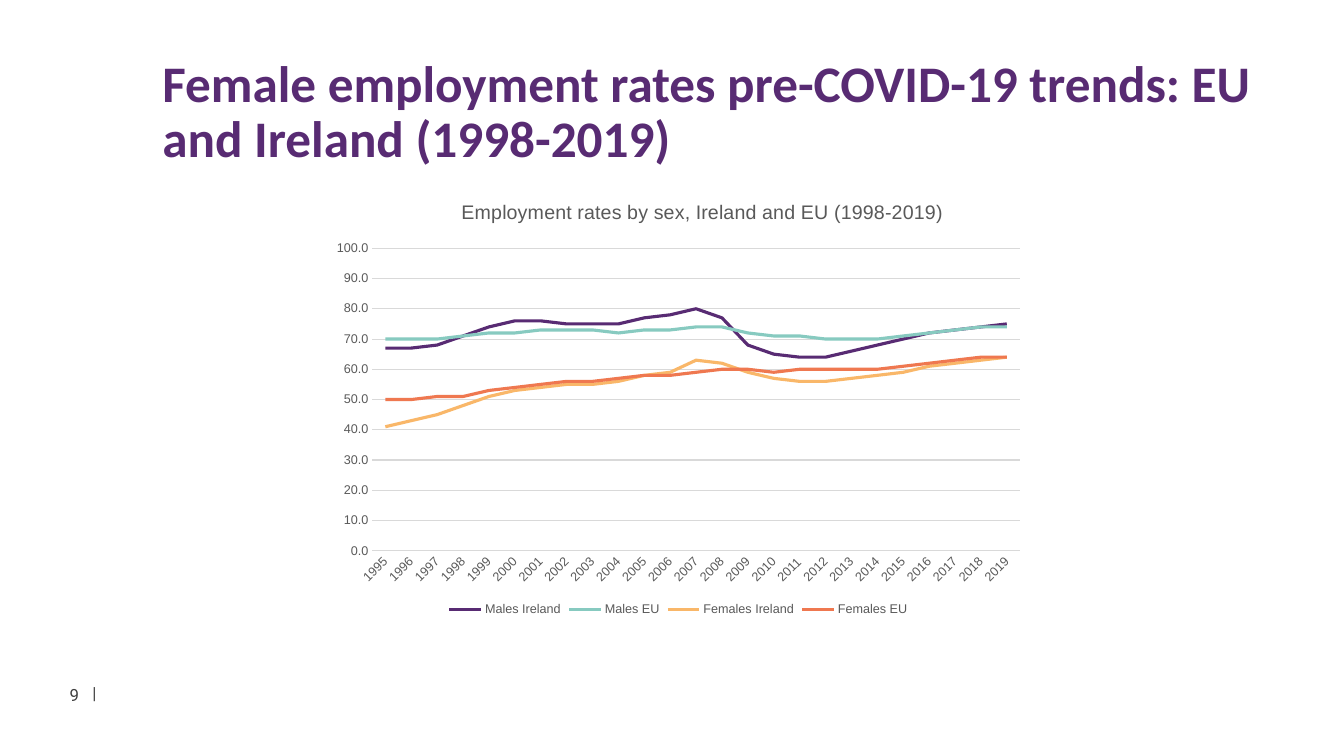
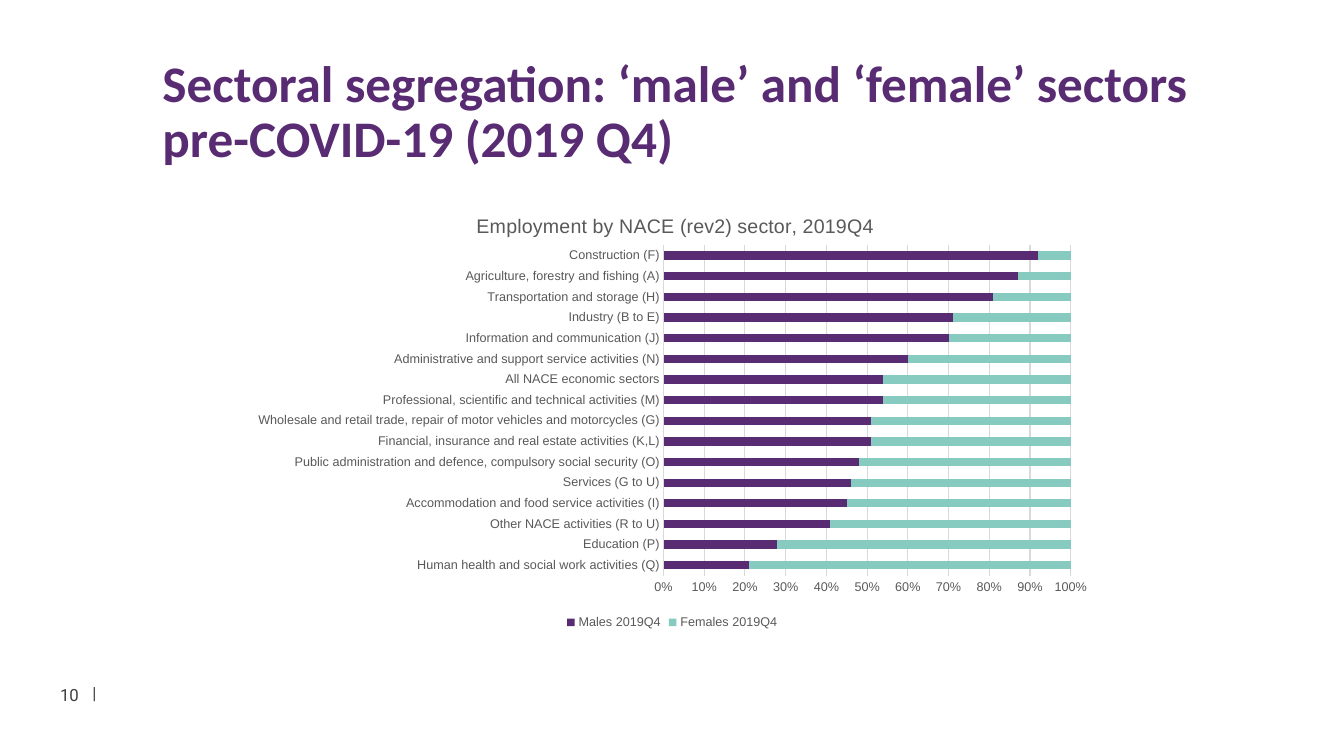
import pptx
import pptx.chart.data
import pptx.dml.color
import pptx.enum.chart
import pptx.enum.text
import pptx.oxml
import pptx.oxml.ns
import pptx.util

Cm = pptx.util.Cm
Pt = pptx.util.Pt
RGB = pptx.dml.color.RGBColor
qn = pptx.oxml.ns.qn
KIND = pptx.enum.chart.XL_CHART_TYPE
ALIGN = pptx.enum.text.PP_ALIGN
ANCHOR = pptx.enum.text.MSO_ANCHOR

# Shared colours and text styles
PURPLE = RGB(0x58, 0x2B, 0x73)
TEAL = RGB(0x87, 0xCA, 0xC0)
AMBER = RGB(0xF9, 0xB7, 0x69)
CORAL = RGB(0xEF, 0x78, 0x50)
DARK = RGB(0x3F, 0x3F, 0x3F)
GREY = RGB(0x59, 0x59, 0x59)
PALE = RGB(0xD9, 0xD9, 0xD9)
TONES = [PURPLE, TEAL, AMBER, CORAL]

HEAD = {"name": "Calibri", "size": Pt(36.6), "bold": True}
FOOT = {"name": "Roboto", "size": Pt(12)}
LABEL = {"name": "Arial", "size": Pt(9)}
TITLE = {"name": "Arial", "size": Pt(14), "bold": False}

# Footer parts: box in cm, alignment, anchor
NUMBER = ((0.89, 17.07, 1.35, 0.86), ALIGN.RIGHT, ANCHOR.MIDDLE)
RULE = ((2.08, 17.09, 0.61, 0.76), ALIGN.LEFT, ANCHOR.TOP)

# Slide content
PAGES = [
    {
        "head": "Female employment rates pre-COVID-19 trends: EU and Ireland (1998-2019)",
        "page": "9",
        "kind": KIND.LINE,
        "box": (8.13, 4.6, 17.93, 11.05),
        "title": "Employment rates by sex, Ireland and EU (1998-2019)",
        "spot": {"x": 0.19, "y": 0.03},
        "plot": {"x": 0.07, "y": 0.15, "w": 0.91, "h": 0.69},
        "scale": {"minimum_scale": 0, "maximum_scale": 100, "major_unit": 10},
        "format": "#,##0.0",
        "cats": [str(year) for year in range(1995, 2020)],
        "series": {
            "Males Ireland": [67, 67, 68, 71, 74, 76, 76, 75, 75, 75, 77, 78, 80,
                              77, 68, 65, 64, 64, 66, 68, 70, 72, 73, 74, 75],
            "Males EU": [70, 70, 70, 71, 72, 72, 73, 73, 73, 72, 73, 73, 74,
                         74, 72, 71, 71, 70, 70, 70, 71, 72, 73, 74, 74],
            "Females Ireland": [41, 43, 45, 48, 51, 53, 54, 55, 55, 56, 58, 59, 63,
                                62, 59, 57, 56, 56, 57, 58, 59, 61, 62, 63, 64],
            "Females EU": [50, 50, 51, 51, 53, 54, 55, 56, 56, 57, 58, 58, 59,
                           60, 60, 59, 60, 60, 60, 60, 61, 62, 63, 64, 64],
        },
    },
    {
        "head": "Sectoral segregation: ‘male’ and ‘female’ sectors pre-COVID-19 (2019 Q4)",
        "page": "10",
        "kind": KIND.BAR_STACKED_100,
        "box": (6.02, 4.72, 21.84, 11.25),
        "title": "Employment by NACE (rev2) sector, 2019Q4",
        "spot": {"x": 0.27, "y": 0.05},
        "plot": {"x": 0.49, "y": 0.13, "w": 0.47, "h": 0.74},
        "scale": {"major_unit": 0.1},
        "format": "0%",
        "cats": [
            "Human health and social work activities (Q)",
            "Education (P)",
            "Other NACE activities (R to U)",
            "Accommodation and food service activities (I)",
            "Services (G to U)",
            "Public administration and defence, compulsory social security (O)",
            "Financial, insurance and real estate activities (K,L)",
            "Wholesale and retail trade, repair of motor vehicles and motorcycles (G)",
            "Professional, scientific and technical activities (M)",
            "All NACE economic sectors",
            "Administrative and support service activities (N)",
            "Information and communication (J)",
            "Industry (B to E)",
            "Transportation and storage (H)",
            "Agriculture, forestry and fishing (A)",
            "Construction (F)",
        ],
        "series": {
            "Males 2019Q4": [21, 28, 41, 45, 46, 48, 51, 51,
                             54, 54, 60, 70, 71, 81, 87, 92],
            "Females 2019Q4": [79, 72, 59, 55, 54, 52, 49, 49,
                               46, 46, 40, 30, 29, 19, 13, 8],
        },
    },
]


def style(font, look, tone):
    for key, value in look.items():
        setattr(font, key, value)
    font.color.rgb = tone


def place(node, index, sizes, inner=False):
    """Give a chart part a fixed place, in fractions of the chart."""
    for old in node.findall(qn("c:layout")):
        node.remove(old)
    target = '<c:layoutTarget val="inner"/>' if inner else ""
    modes = "".join(f'<c:{key}Mode val="edge"/>' for key in "xy")
    marks = "".join(f'<c:{key} val="{value}"/>' for key, value in sizes.items())
    node.insert(index, pptx.oxml.parse_xml(
        f'<c:layout {pptx.oxml.ns.nsdecls("c")}><c:manualLayout>'
        f"{target}{modes}{marks}</c:manualLayout></c:layout>"))


deck = pptx.Presentation()
deck.slide_width = Cm(33.87)
deck.slide_height = Cm(19.05)

for page in PAGES:
    slide = deck.slides.add_slide(deck.slide_layouts[5])

    # Title
    head = slide.shapes.title
    head.left, head.top, head.width, head.height = map(Cm, (3.84, 0.99, 28.3, 3.73))
    frame = head.text_frame
    frame.text = page["head"]
    frame.auto_size = pptx.enum.text.MSO_AUTO_SIZE.NONE
    frame.vertical_anchor = ANCHOR.MIDDLE
    para = frame.paragraphs[0]
    para.alignment = ALIGN.LEFT
    para.line_spacing = 0.9
    style(para.font, HEAD, PURPLE)

    # Footer
    for text, (box, align, anchor) in ((page["page"], NUMBER), ("|", RULE)):
        frame = slide.shapes.add_textbox(*map(Cm, box)).text_frame
        frame.word_wrap = True
        frame.vertical_anchor = anchor
        frame.text = text
        frame.paragraphs[0].alignment = align
        style(frame.paragraphs[0].font, FOOT, DARK)

    # Chart
    data = pptx.chart.data.CategoryChartData()
    data.categories = page["cats"]
    for name, values in page["series"].items():
        data.add_series(name, values)
    chart = slide.shapes.add_chart(page["kind"], *map(Cm, page["box"]), data).chart
    style(chart.font, LABEL, GREY)

    # Chart title, plot area and legend
    chart.has_title = True
    frame = chart.chart_title.text_frame
    frame.text = page["title"]
    style(frame.paragraphs[0].font, TITLE, GREY)
    area = chart.element.find(".//" + qn("c:plotArea"))
    place(chart.element.find(".//" + qn("c:title")), 1, page["spot"])
    place(area, 0, page["plot"], inner=True)
    chart.has_legend = True
    chart.legend.position = pptx.enum.chart.XL_LEGEND_POSITION.BOTTOM
    chart.legend.include_in_layout = False
    style(chart.legend.font, LABEL, GREY)

    # Axes
    cat, val = chart.category_axis, chart.value_axis
    for axis in (cat, val):
        axis.major_tick_mark = pptx.enum.chart.XL_TICK_MARK.NONE
        axis.minor_tick_mark = pptx.enum.chart.XL_TICK_MARK.NONE
        style(axis.tick_labels.font, LABEL, GREY)
    for key, value in page["scale"].items():
        setattr(val, key, value)
    val.tick_labels.number_format = page["format"]
    val.tick_labels.number_format_is_linked = False
    val.format.line.fill.background()
    val.has_major_gridlines = True
    cat.has_major_gridlines = False
    for line in (cat.format.line, val.major_gridlines.format.line):
        line.color.rgb = PALE
        line.width = Pt(0.75)

    # Series
    plot = chart.plots[0]
    plot.vary_by_categories = False
    for series, tone in zip(plot.series, TONES):
        if page["kind"] == KIND.LINE:
            series.smooth = False
            series.format.line.color.rgb = tone
            series.format.line.width = Pt(2.25)
        else:
            series.format.fill.solid()
            series.format.fill.fore_color.rgb = tone
    if page["kind"] == KIND.LINE:
        # Slanted year labels
        area.find(f"{qn('c:catAx')}/{qn('c:txPr')}/{qn('a:bodyPr')}").set("rot", "-2700000")
    else:
        plot.gap_width = 150
        plot.overlap = 100

deck.save("out.pptx")
